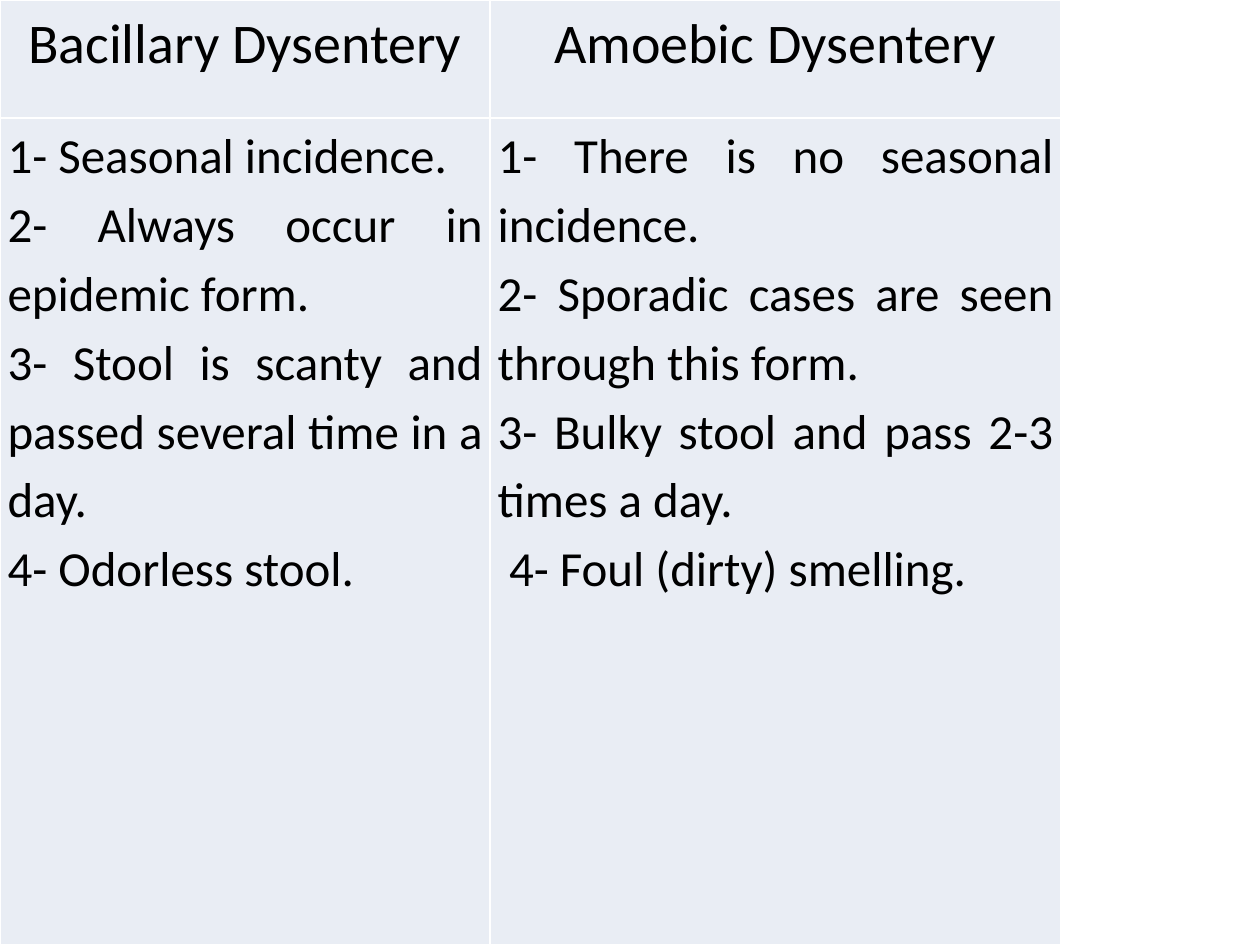
from dataclasses import dataclass

from lxml.etree import SubElement
from pptx import Presentation
from pptx.dml.color import RGBColor
from pptx.enum.text import PP_ALIGN as Align
from pptx.oxml.ns import qn
from pptx.util import Inches, Pt

COLORS = {"text": "000000", "cell": "E9EDF4", "border": "FFFFFF"}
FONT = "Calibri"
SLIDE_WIDTH, SLIDE_HEIGHT = 10, 7.5
COLUMN_SHARES = (0.389, 0.453)  # of the slide's width
ROW_SHARES = (0.125, 0.875)  # of the slide's height
SIDE_MARGIN = 0.06


@dataclass(frozen=True)
class Line:
    text: str
    indent: float = 0


@dataclass(frozen=True)
class Disease:
    name: str
    features: tuple[Line, ...]


DISEASES = (
    Disease("Bacillary Dysentery", (
        Line("1- Seasonal incidence."),
        Line("2- Always occur in epidemic form."),
        Line("3- Stool is scanty and passed several time in a day."),
        Line("4- Odorless stool."),
    )),
    Disease("Amoebic Dysentery", (
        Line("1- There is no seasonal incidence."),
        Line("2- Sporadic cases are seen through this form."),
        Line("3- Bulky stool and pass 2-3 times a day."),
        Line("4- Foul (dirty) smelling.", indent=0.09),
    )),
)


def style_cell(cell) -> None:
    """Set margins, white borders and the fill."""
    cell.margin_left = cell.margin_right = Inches(SIDE_MARGIN)
    cell.margin_top = cell.margin_bottom = 0
    properties = cell._tc.get_or_add_tcPr()
    for side in ("a:lnL", "a:lnR", "a:lnT", "a:lnB"):
        border = SubElement(properties, qn(side), w=str(Pt(1)))
        paint = SubElement(border, qn("a:solidFill"))
        SubElement(paint, qn("a:srgbClr"), val=COLORS["border"])
    cell.fill.solid()
    cell.fill.fore_color.rgb = RGBColor.from_string(COLORS["cell"])


def write_cell(cell, lines: tuple[Line, ...], size: int, align: Align) -> None:
    """Write one paragraph for each line."""
    style_cell(cell)
    frame = cell.text_frame
    for index, line in enumerate(lines):
        para = frame.add_paragraph() if index else frame.paragraphs[0]
        para.text = line.text
        para.alignment = align
        para.line_spacing = 1.15
        if line.indent:
            para._p.get_or_add_pPr().set("indent", str(Inches(line.indent)))
        para.font.name = FONT
        para.font.size = Pt(size)
        para.font.color.rgb = RGBColor.from_string(COLORS["text"])


def main() -> None:
    deck = Presentation()
    deck.slide_width, deck.slide_height = Inches(SLIDE_WIDTH), Inches(SLIDE_HEIGHT)
    page = deck.slides.add_slide(deck.slide_layouts[6])

    # Comparison table, full slide height
    table = page.shapes.add_table(
        len(ROW_SHARES), len(COLUMN_SHARES), 0, 0,
        Inches(SLIDE_WIDTH * sum(COLUMN_SHARES)), Inches(SLIDE_HEIGHT),
    ).table
    table.first_row = table.horz_banding = False
    for column, share in zip(table.columns, COLUMN_SHARES):
        column.width = Inches(SLIDE_WIDTH * share)
    for row, share in zip(table.rows, ROW_SHARES):
        row.height = Inches(SLIDE_HEIGHT * share)

    # One column for each disease
    for index, disease in enumerate(DISEASES):
        write_cell(table.cell(0, index), (Line(disease.name),), 32, Align.CENTER)
        write_cell(table.cell(1, index), disease.features, 28, Align.JUSTIFY)

    deck.save("out.pptx")


if __name__ == "__main__":
    main()
